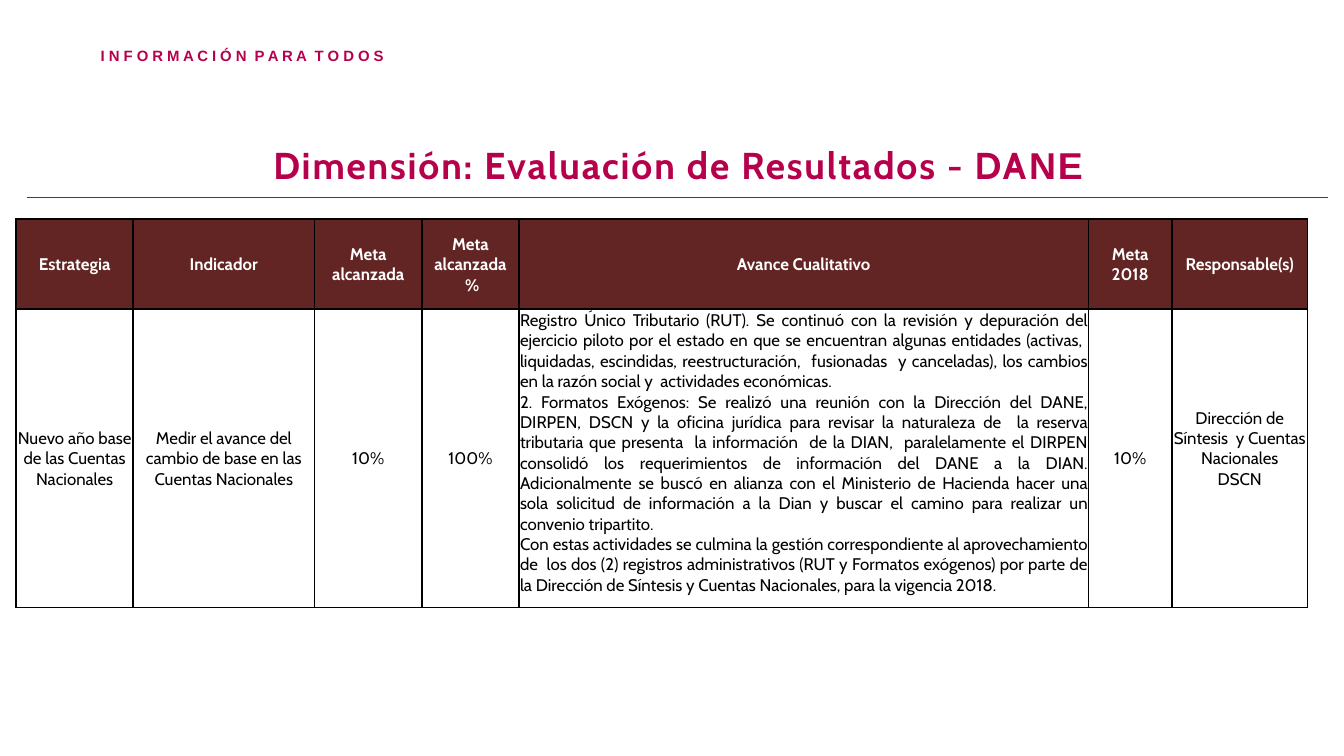
from lxml import etree
from pptx import Presentation
from pptx.dml.color import RGBColor
from pptx.enum.shapes import MSO_CONNECTOR as CONNECTOR
from pptx.enum.text import MSO_ANCHOR as ANCHOR, PP_ALIGN as ALIGN
from pptx.oxml.ns import qn
from pptx.util import Inches, Pt

MAGENTA, MAROON, WHITE, BLACK = "B6004B", "632523", "FFFFFF", "000000"

COLUMN_WIDTHS = [0.87, 1.35, 0.8, 0.72, 4.24, 0.62, 1.01]
ROW_HEIGHTS = [0.67, 2.22]
HEADERS = ["Estrategia", "Indicador", "Meta alcanzada", "Meta alcanzada\v %",
           "Avance Cualitativo", "Meta\v2018", "Responsable(s)"]
PROGRESS = [
    "Registro Único Tributario (RUT). Se continuó con la revisión y depuración del "
    "ejercicio piloto por el estado en que se encuentran algunas entidades (activas,  "
    "liquidadas, escindidas, reestructuración,  fusionadas  y canceladas), los cambios "
    "en la razón social y  actividades económicas.",
    "2. Formatos Exógenos: Se realizó una reunión con la Dirección del DANE, DIRPEN, "
    "DSCN y la oficina jurídica para revisar la naturaleza de  la reserva tributaria "
    "que presenta  la información  de la DIAN,  paralelamente el DIRPEN consolidó los "
    "requerimientos de información del DANE a la DIAN. Adicionalmente se buscó en "
    "alianza con el Ministerio de Hacienda hacer una sola solicitud de información a "
    "la Dian y buscar el camino para realizar un convenio tripartito.",
    "Con estas actividades se culmina la gestión correspondiente al aprovechamiento "
    "de  los dos (2) registros administrativos (RUT y Formatos exógenos) por parte de "
    "la Dirección de Síntesis y Cuentas Nacionales, para la vigencia 2018.",
]
RESULTS = ["Nuevo año base de las Cuentas Nacionales",
           "Medir el avance del cambio de base en las Cuentas Nacionales",
           "10%", "100%", "\n".join(PROGRESS), "10%",
           "Dirección de Síntesis  y Cuentas Nacionales\nDSCN"]


def rgb(color):
    return RGBColor.from_string(color)


class SlideBuilder:
    font = "Cabin"

    def __init__(self, slide):
        self.slide = slide

    def style(self, paragraph, size, color, bold, align, font=None):
        paragraph.alignment = align
        paragraph.font.name = font or self.font
        paragraph.font.size = Pt(size)
        paragraph.font.bold = bold
        paragraph.font.color.rgb = rgb(color)

    def text(self, box, runs, size, align, spacing, font=None, top=0):
        """Add one bold line; runs are (text, font override), spacing is in points."""
        frame = self.slide.shapes.add_textbox(*map(Inches, box)).text_frame
        frame.word_wrap = True
        frame.margin_left = frame.margin_right = frame.margin_bottom = 0
        frame.margin_top = Inches(top)
        paragraph = frame.paragraphs[0]
        self.style(paragraph, size, MAGENTA, True, align, font)
        for words, override in runs:
            run = paragraph.add_run()
            run.text = words
            run._r.get_or_add_rPr().set("spc", str(round(spacing * 100)))
            if override:
                run.font.name = override
        return paragraph

    def rule(self, left, right, y):
        line = self.slide.shapes.add_connector(
            CONNECTOR.STRAIGHT, Inches(left), Inches(y), Inches(right), Inches(y))
        line.line.color.rgb = rgb(MAGENTA)
        line.line.width = Pt(0.75)
        etree.SubElement(line._element.spPr, qn("a:effectLst"))

    def borders(self, cell):
        properties = cell._tc.get_or_add_tcPr()
        for position, side in enumerate(("a:lnL", "a:lnR", "a:lnT", "a:lnB")):
            border = etree.Element(qn(side), w=str(Pt(1)))
            fill = etree.SubElement(border, qn("a:solidFill"))
            etree.SubElement(fill, qn("a:srgbClr"), val=BLACK)
            properties.insert(position, border)

    def cell(self, cell, words, header, align):
        cell.text = words
        cell.margin_left = cell.margin_right = cell.margin_top = Inches(0.01)
        cell.margin_bottom = 0
        cell.vertical_anchor = ANCHOR.TOP if align == ALIGN.JUSTIFY else ANCHOR.MIDDLE
        if header:
            cell.fill.solid()
            cell.fill.fore_color.rgb = rgb(MAROON)
        else:
            cell.fill.background()
        for paragraph in cell.text_frame.paragraphs:
            self.style(paragraph, 9, WHITE if header else BLACK, header, align)
        self.borders(cell)

    def table(self, left, top, widths, heights, rows):
        table = self.slide.shapes.add_table(
            len(heights), len(widths), Inches(left), Inches(top),
            Inches(sum(widths)), Inches(sum(heights))).table
        table.first_row = table.horz_banding = False
        for column, width in zip(table.columns, widths):
            column.width = Inches(width)
        for r, (height, row) in enumerate(zip(heights, rows)):
            table.rows[r].height = Inches(height)
            for c, words in enumerate(row):
                align = ALIGN.JUSTIFY if words == RESULTS[4] else ALIGN.CENTER
                self.cell(table.cell(r, c), words, r == 0, align)
        return table


def main():
    deck = Presentation()
    deck.slide_width = Inches(10)
    deck.slide_height = Inches(10 * 9 / 16)
    builder = SlideBuilder(deck.slides.add_slide(deck.slide_layouts[6]))

    slogan = builder.text((0.75, 0.3, 3.06, 0.19),
                          [("I N F O R M A C I Ó N  P A R A  T O D O S", None)],
                          8, ALIGN.LEFT, -0.05, font="Arial", top=0.01)
    slogan.line_spacing = 1.3
    builder.rule(0.2, 9.88, 1.47)
    results = builder.table(0.12, 1.63, COLUMN_WIDTHS, ROW_HEIGHTS, [HEADERS, RESULTS])
    results.cell(1, 6).margin_bottom = Inches(0.15)
    builder.text((0.2, 1.06, 9.69, 0.34),
                 [("Dimensión: Evaluación de Resultados - DA", None), ("NE", "Arial")],
                 20, ALIGN.CENTER, 0.95)
    deck.save("out.pptx")


if __name__ == "__main__":
    main()
